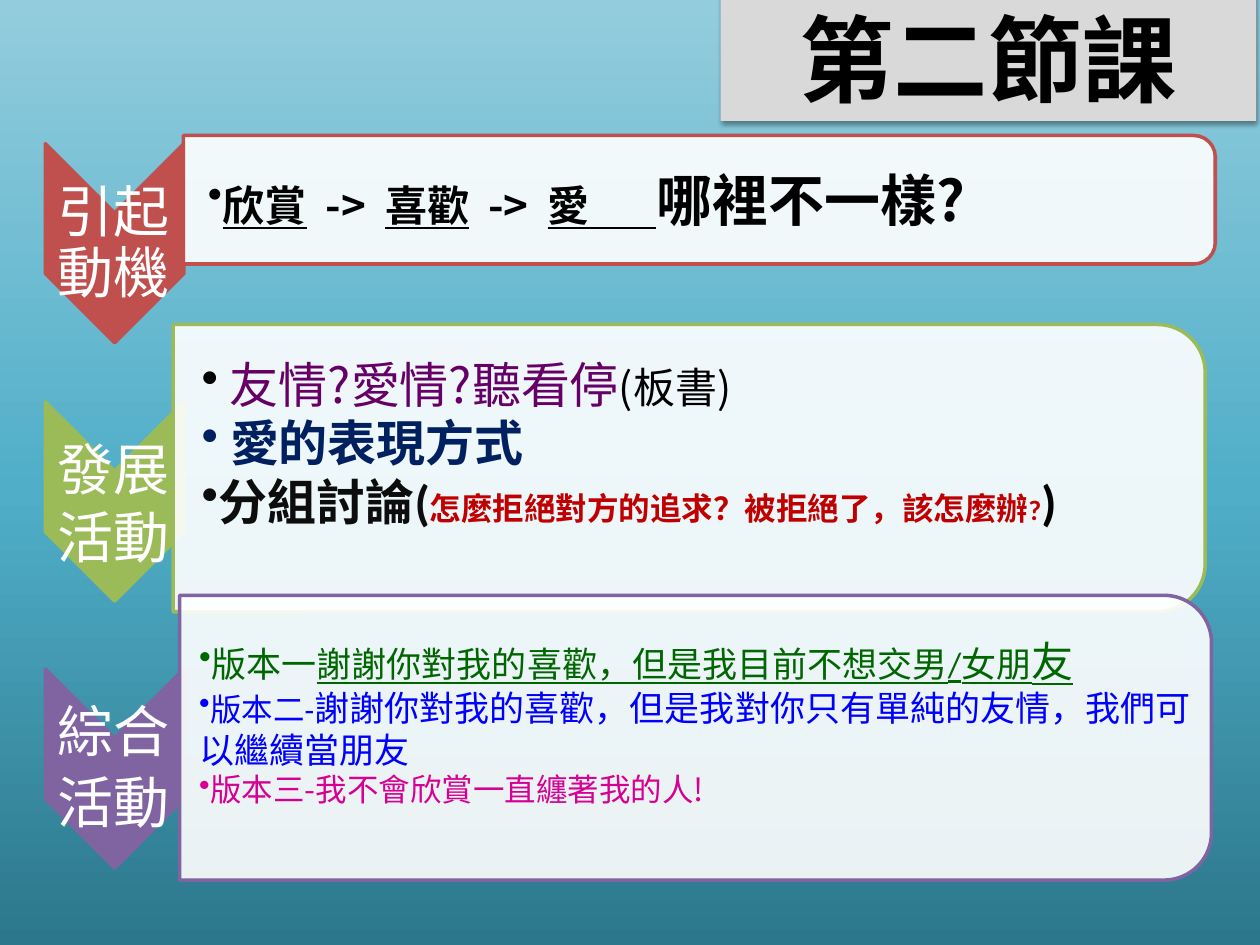
from dataclasses import dataclass
from typing import Optional

from pptx import Presentation
from pptx.dml.color import RGBColor
from pptx.enum.shapes import MSO_SHAPE as Preset
from pptx.enum.text import MSO_ANCHOR as Anchor, MSO_AUTO_SIZE as AutoSize, PP_ALIGN as Align
from pptx.oxml import parse_xml
from pptx.oxml.ns import nsdecls, qn
from pptx.util import Inches, Pt

WHITE = RGBColor(0xFF, 0xFF, 0xFF)
BLACK = RGBColor(0x00, 0x00, 0x00)
GRAY = RGBColor(0xD9, 0xD9, 0xD9)
RED = RGBColor(0xC0, 0x50, 0x4D)
GREEN = RGBColor(0x9B, 0xBB, 0x59)
VIOLET = RGBColor(0x80, 0x64, 0xA2)
PLUM = RGBColor(0x66, 0x00, 0x66)
NAVY = RGBColor(0x00, 0x20, 0x60)
CHARCOAL = RGBColor(0x0D, 0x0D, 0x0D)
DARK_RED = RGBColor(0xC0, 0x00, 0x00)
DARK_GREEN = RGBColor(0x00, 0x66, 0x00)
BLUE = RGBColor(0x00, 0x00, 0xFF)
PINK = RGBColor(0xD6, 0x00, 0x93)
SKY_STOPS = [(0, RGBColor(0x2C, 0x77, 0x8B)), (48, RGBColor(0x50, 0xAE, 0xC8)),
             (100, RGBColor(0x93, 0xCD, 0xDD))]
SANS_SC = "Noto Sans CJK SC"
SANS_JP = "Noto Sans CJK JP"
CALIBRI = "Calibri"
LINE_HEIGHT = 1.2


@dataclass
class Span:
    text: str
    size: float
    color: RGBColor = BLACK
    font: str = SANS_SC
    bold: bool = False
    underline: bool = False


@dataclass
class Box:
    left: float
    top: float
    width: float
    height: float


@dataclass
class Stage:
    label: list[str]
    color: RGBColor
    chevron_top: float
    label_spacing: float
    label_gap: float
    panel: Box
    body: Box
    inset: float
    lines: list[list[Span]]


STAGES = [
    Stage(["引起", "動機"], RED, 1.38, 0.9, 0, Box(5.04, -2.51, 1.02, 8.19),
          Box(1.46, 1.12, 8.14, 0.92), 0.19, [
        [Span("欣賞", 24, bold=True, underline=True),
         Span("  ->  ", 24, bold=True),
         Span("喜歡", 24, bold=True, underline=True),
         Span("  ->  ", 24, bold=True),
         Span("愛       ", 24, bold=True, underline=True),
         Span("哪裡不一樣?", 32, bold=True)]]),
    Stage(["發展", "活動"], GREEN, 3.43, 1, 0, Box(4.33, -0.38, 2.28, 8.19),
          Box(1.38, 2.68, 8.08, 1.66), 0.22, [
        [Span(" ", 28), Span("友情?愛情?聽看停", 28, PLUM, SANS_JP), Span("(板書)", 24)],
        [Span(" ", 28, NAVY, bold=True), Span("愛的表現方式", 28, NAVY, CALIBRI, True)],
        [Span("分組討論(", 28, CHARCOAL, CALIBRI, True),
         Span("怎麼拒絕對方的追求？被拒絕了，該怎麼辦", 18, DARK_RED, CALIBRI, True),
         Span("?", 16, DARK_RED, CALIBRI, True),
         Span(")", 28, BLACK, CALIBRI, True)]]),
    Stage(["綜合", "活動"], VIOLET, 5.55, 0.9, 6, Box(4.39, 1.76, 2.26, 8.19),
          Box(1.42, 4.84, 8.08, 1.78), 0.16, [
        [Span("版本一", 20, DARK_GREEN, CALIBRI),
         Span("謝謝你對我的喜歡，但是我目前不想交男/女朋", 20, DARK_GREEN, CALIBRI, underline=True),
         Span("友", 24, DARK_GREEN, CALIBRI, underline=True)],
        [Span("版本二-", 18, BLUE, CALIBRI),
         Span("謝謝你對我的喜歡，但是我對你只有單純的友情，我們可以繼續當朋友", 20, BLUE, CALIBRI)],
        [Span("版本三-我不會欣賞一直纏著我的人!", 18, PINK)]]),
]


def add_span(paragraph, span: Span) -> None:
    run = paragraph.add_run()
    run.text = span.text
    font = run.font
    font.size = Pt(span.size)
    font.bold = span.bold
    font.underline = span.underline
    font.color.rgb = span.color
    font.name = span.font
    east_asian = SANS_SC if span.font == CALIBRI else span.font
    latin = run._r.rPr.find(qn("a:latin"))
    latin.addnext(parse_xml(f'<a:ea {nsdecls("a")} typeface="{east_asian}"/>'))


def add_text(slide, box: Box, lines: list[list[Span]], inset: float = 0.02, bullet: bool = False,
             align: Align = Align.LEFT, spacing: float = 1, gap: float = 0) -> None:
    shape = slide.shapes.add_textbox(*(Inches(v) for v in (box.left, box.top, box.width, box.height)))
    frame = shape.text_frame
    frame.word_wrap = True
    frame.vertical_anchor = Anchor.MIDDLE
    frame.margin_left = Inches(inset)
    frame.margin_right = frame.margin_top = frame.margin_bottom = Inches(0.02)
    for index, spans in enumerate(lines):
        paragraph = frame.paragraphs[0] if index == 0 else frame.add_paragraph()
        if bullet:
            paragraph._p.get_or_add_pPr().append(parse_xml(f'<a:buChar {nsdecls("a")} char="•"/>'))
        paragraph.alignment = align
        paragraph.line_spacing = Pt(max(span.size for span in spans) * LINE_HEIGHT * spacing)
        paragraph.space_after = Pt(gap)
        for span in spans:
            add_span(paragraph, span)


def add_turned_shape(slide, preset: Preset, box: Box, fill: RGBColor, line: RGBColor,
                     opacity: Optional[int] = None) -> None:
    shape = slide.shapes.add_shape(preset, *(Inches(v) for v in (box.left, box.top, box.width, box.height)))
    shape.rotation = 90
    shape.shadow.inherit = False
    shape.fill.solid()
    shape.fill.fore_color.rgb = fill
    shape.line.color.rgb = line
    shape.line.width = Pt(2)
    if opacity is not None:
        color = shape._element.spPr.find(qn("a:solidFill"))[0]
        color.append(parse_xml(f'<a:alpha {nsdecls("a")} val="{opacity * 1000}"/>'))


def add_stage(slide, stage: Stage) -> None:
    top = stage.chevron_top
    add_turned_shape(slide, Preset.CHEVRON, Box(0.12, top, 1.58, 1.1), stage.color, stage.color)
    add_text(slide, Box(0.35, top + 0.32, 1.1, 0.47), [[Span(text, 32, WHITE)] for text in stage.label],
             align=Align.CENTER, spacing=stage.label_spacing, gap=stage.label_gap)
    add_turned_shape(slide, Preset.ROUND_2_SAME_RECTANGLE, stage.panel, WHITE, stage.color, 90)
    add_text(slide, stage.body, stage.lines, stage.inset, bullet=True)


def paint_background(slide) -> None:
    fill = slide.background.fill
    fill.gradient()
    fill.gradient_angle = 90
    stops = slide.element.xpath(".//p:bg//a:gsLst")[0]
    for stop in list(stops):
        stops.remove(stop)
    for position, color in SKY_STOPS:
        stops.append(parse_xml(f'<a:gs {nsdecls("a")} pos="{position * 1000}"><a:srgbClr val="{color}"/></a:gs>'))


def format_title(slide) -> None:
    title = slide.shapes.title
    title.left, title.top, title.width, title.height = (Inches(v) for v in (5.72, -0.05, 4.25, 1.01))
    title.fill.solid()
    title.fill.fore_color.rgb = GRAY
    title._element.spPr.append(parse_xml(
        f'<a:effectLst {nsdecls("a")}><a:outerShdw blurRad="{Pt(3.1)}" dist="{Pt(1.6)}" dir="5400000" '
        f'rotWithShape="0"><a:srgbClr val="{BLACK}"><a:alpha val="38000"/></a:srgbClr>'
        '</a:outerShdw></a:effectLst>'))
    frame = title.text_frame
    frame.auto_size = AutoSize.NONE
    frame.vertical_anchor = Anchor.MIDDLE
    paragraph = frame.paragraphs[0]
    paragraph.alignment = Align.CENTER
    add_span(paragraph, Span("第二節課", 54, bold=True))


def main() -> None:
    presentation = Presentation()
    presentation.slide_width = Inches(10)
    presentation.slide_height = Inches(7.5)
    slide = presentation.slides.add_slide(presentation.slide_layouts[5])
    paint_background(slide)
    for stage in STAGES:
        add_stage(slide, stage)
    format_title(slide)
    presentation.save("out.pptx")


if __name__ == "__main__":
    main()
